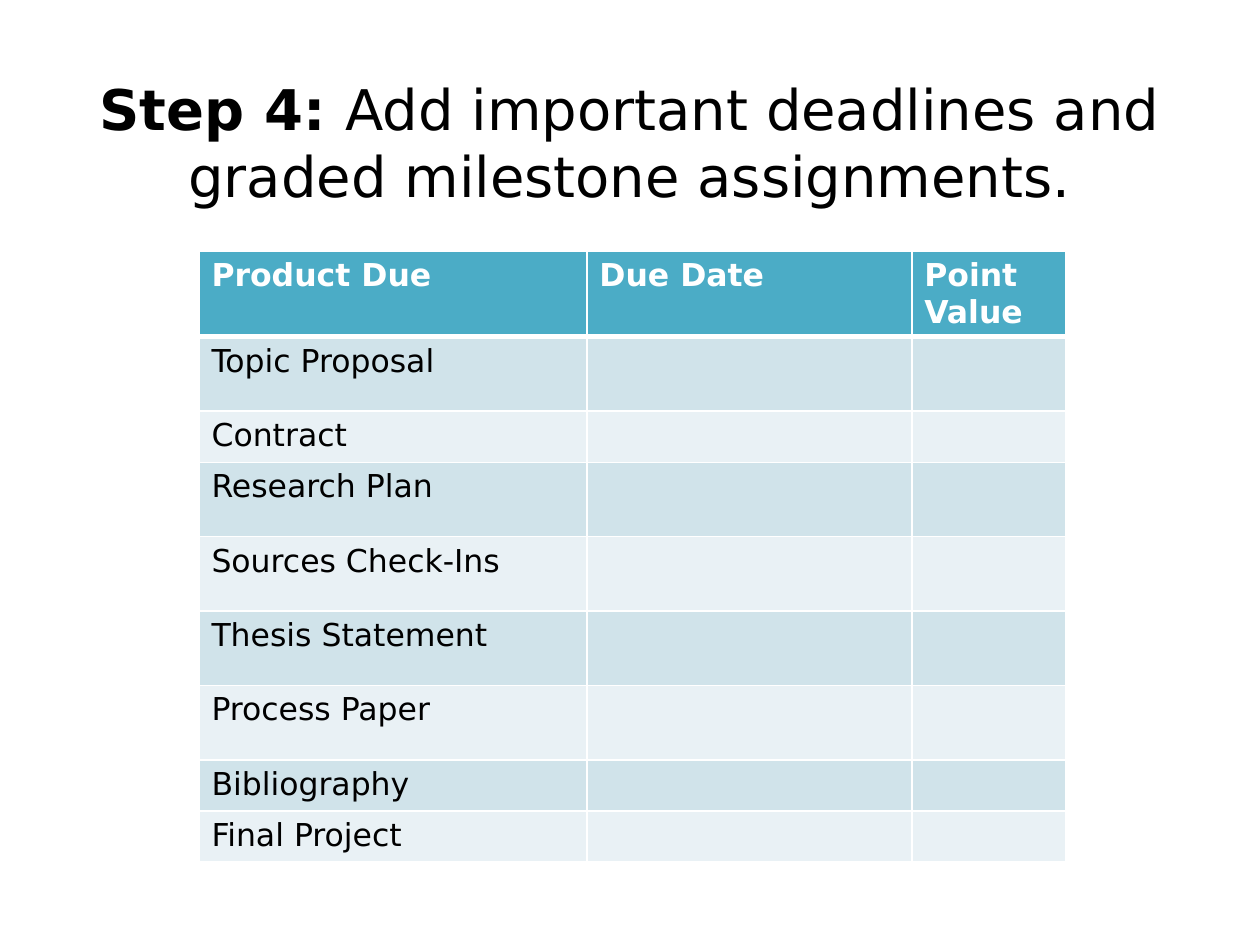
import pptx
import pptx.dml.color
import pptx.enum.text
import pptx.oxml.ns
import pptx.util
from lxml import etree

Cm = pptx.util.Cm
Pt = pptx.util.Pt
RGBColor = pptx.dml.color.RGBColor

BLACK = RGBColor(0x00, 0x00, 0x00)
WHITE = RGBColor(0xFF, 0xFF, 0xFF)
TEAL = RGBColor(0x4B, 0xAC, 0xC6)
BAND_DARK = RGBColor(0xD0, 0xE3, 0xEA)
BAND_LIGHT = RGBColor(0xE9, 0xF1, 0xF5)

HEADINGS = ("Product Due", "Due Date", "Point Value")
HEADING_HEIGHT = 1.7
TALL, LOW = 1.5, 0.99
PRODUCTS = (
    ("Topic Proposal", TALL),
    ("Contract", LOW),
    ("Research Plan", TALL),
    ("Sources Check-Ins", TALL),
    ("Thesis Statement", TALL),
    ("Process Paper", TALL),
    ("Bibliography", LOW),
    ("Final Project", LOW),
)
COLUMN_WIDTHS = (7.82, 6.55, 3.1)


class SlideBuilder:
    font = "DejaVu Sans"
    title_size = Pt(32)
    table_size = Pt(18)

    def __init__(self, slide):
        self.slide = slide

    def style_run(self, run, size, color, bold):
        run.font.name = self.font
        run.font.size = size
        run.font.bold = bold
        run.font.color.rgb = color

    def title(self, lead, rest, left, top, width, height):
        heading = self.slide.shapes.title
        heading.left, heading.top = Cm(left), Cm(top)
        heading.width, heading.height = Cm(width), Cm(height)
        frame = heading.text_frame
        frame.word_wrap = True
        frame.auto_size = pptx.enum.text.MSO_AUTO_SIZE.NONE
        frame.vertical_anchor = pptx.enum.text.MSO_ANCHOR.MIDDLE
        frame.margin_bottom = Cm(1.37)  # lifts the text clear of the table
        paragraph = frame.paragraphs[0]
        paragraph.alignment = pptx.enum.text.PP_ALIGN.CENTER
        for text, bold in ((lead, True), (rest, False)):
            run = paragraph.add_run()
            run.text = text
            self.style_run(run, self.title_size, BLACK, bold)

    def borders(self, cell, **widths):
        properties = cell._tc.get_or_add_tcPr()
        for side in "LRTB":
            line = etree.SubElement(
                properties, pptx.oxml.ns.qn(f"a:ln{side}"), w=str(Pt(widths.get(side, 1)))
            )
            fill = etree.SubElement(line, pptx.oxml.ns.qn("a:solidFill"))
            etree.SubElement(fill, pptx.oxml.ns.qn("a:srgbClr"), val=str(WHITE))

    def cell(self, cell, text, fill, color, bold, **border_widths):
        self.borders(cell, **border_widths)
        cell.fill.solid()
        cell.fill.fore_color.rgb = fill
        cell.text_frame.text = text
        for run in cell.text_frame.paragraphs[0].runs:
            self.style_run(run, self.table_size, color, bold)

    def table(self, headings, products, left, top, widths):
        heights = [HEADING_HEIGHT] + [height for _, height in products]
        schedule = self.slide.shapes.add_table(
            len(heights), len(widths),
            Cm(left), Cm(top), Cm(sum(widths)), Cm(sum(heights)),
        ).table
        for column, width in zip(schedule.columns, widths):
            column.width = Cm(width)
        for row, height in zip(schedule.rows, heights):
            row.height = Cm(height)

        # Heading row, with a heavier rule below it
        for index, heading in enumerate(headings):
            self.cell(schedule.cell(0, index), heading, TEAL, WHITE, True, B=3)

        # Banded rows, with date and points left open
        for number, (product, _) in enumerate(products, start=1):
            band = BAND_DARK if number % 2 else BAND_LIGHT
            rule = 3 if number == 1 else 1
            for index in range(len(widths)):
                text = product if index == 0 else ""
                self.cell(schedule.cell(number, index), text, band, BLACK, False, T=rule)


def main():
    deck = pptx.Presentation()
    deck.slide_width, deck.slide_height = Cm(25.4), Cm(19.05)
    builder = SlideBuilder(deck.slides.add_slide(deck.slide_layouts[5]))

    # Title
    builder.title(
        "Step 4: ", "Add important deadlines and graded milestone assignments.",
        1.27, 1.88, 22.86, 3.18,
    )

    # Deadlines table
    builder.table(HEADINGS, PRODUCTS, 4.01, 5.06, COLUMN_WIDTHS)

    deck.save("out.pptx")


if __name__ == "__main__":
    main()
